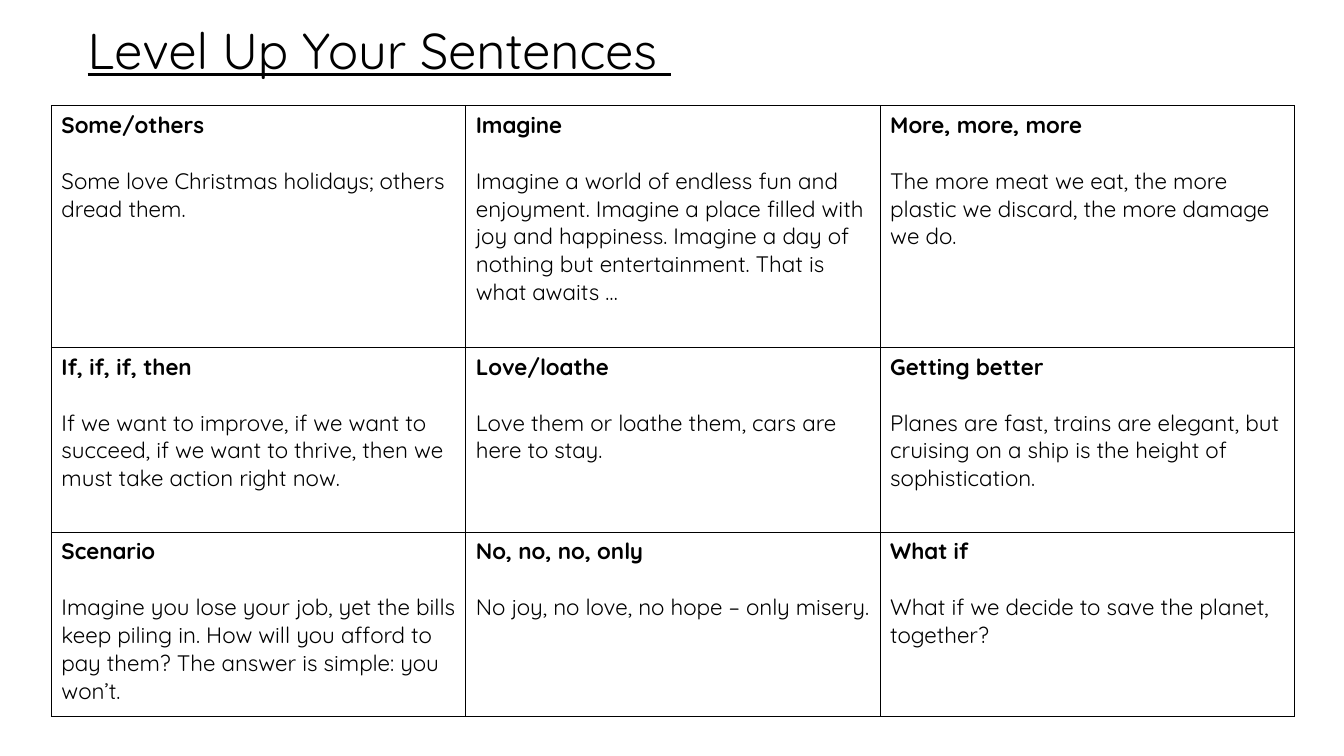
from lxml.etree import SubElement
from pptx import Presentation
from pptx.dml.color import RGBColor
from pptx.enum.text import MSO_ANCHOR, PP_ALIGN
from pptx.oxml.ns import qn
from pptx.util import Pt

EMU_PER_PX = 9144  # 100 px to the inch
FONT = "Quicksand"
BLACK = "000000"
WHITE = "FFFFFF"
COLUMN_WIDTHS = [411, 411, 411]
ROW_HEIGHTS = [240, 183, 183]

# Each cell: name of the sentence type, example
SENTENCE_TYPES = [
    [
        ("Some/others", "Some love Christmas holidays; others dread them."),
        ("Imagine", "Imagine a world of endless fun and enjoyment. Imagine a place "
                    "filled with joy and happiness. Imagine a day of nothing but "
                    "entertainment. That is what awaits …"),
        ("More, more, more", "The more meat we eat, the more plastic we discard, "
                             "the more damage we do."),
    ],
    [
        ("If, if, if, then", "If we want to improve, if we want to succeed, if we want "
                             "to thrive, then we must take action right now."),
        ("Love/loathe", "Love them or loathe them, cars are here to stay."),
        ("Getting better", "Planes are fast, trains are elegant, but cruising on a ship "
                           "is the height of sophistication."),
    ],
    [
        ("Scenario", "Imagine you lose your job, yet the bills keep piling in. How will "
                     "you afford to pay them? The answer is simple: you won’t."),
        ("No, no, no, only", "No joy, no love, no hope – only misery."),
        ("What if", "What if we decide to save the planet, together?"),
    ],
]


def px(length):
    return length * EMU_PER_PX


def add_run(paragraph, text, size, bold=False, underline=False, color=BLACK):
    run = paragraph.add_run()
    run.text = text
    run.font.name = FONT
    run.font.size = Pt(size)
    run.font.bold = bold
    run.font.underline = underline
    run.font.color.rgb = RGBColor.from_string(color)


presentation = Presentation()
presentation.slide_width = px(1333)
presentation.slide_height = px(750)
slide = presentation.slides.add_slide(presentation.slide_layouts[5])

# Title
title = slide.shapes.title
title.left, title.top, title.width, title.height = px(77), px(0), px(1150), px(105)
title.text_frame.vertical_anchor = MSO_ANCHOR.MIDDLE
title_paragraph = title.text_frame.paragraphs[0]
title_paragraph.alignment = PP_ALIGN.LEFT
title_paragraph.line_spacing = 0.9
add_run(title_paragraph, "Level Up Your Sentences ", 36, underline=True)

# Table grid
table = slide.shapes.add_table(
    len(ROW_HEIGHTS), len(COLUMN_WIDTHS), px(51), px(105),
    px(sum(COLUMN_WIDTHS)), px(sum(ROW_HEIGHTS))).table
table.first_row = False
table.horz_banding = False
for column, width in zip(table.columns, COLUMN_WIDTHS):
    column.width = px(width)
for row, height in zip(table.rows, ROW_HEIGHTS):
    row.height = px(height)

# Cells: borders, fill, then heading and example
for row_index, row_entries in enumerate(SENTENCE_TYPES):
    for column_index, (heading, example) in enumerate(row_entries):
        cell = table.cell(row_index, column_index)
        properties = cell._tc.get_or_add_tcPr()
        for side in ("a:lnL", "a:lnR", "a:lnT", "a:lnB"):
            border = SubElement(properties, qn(side), w=str(Pt(1)))
            border_fill = SubElement(border, qn("a:solidFill"))
            SubElement(border_fill, qn("a:srgbClr"), val=BLACK)
        cell.fill.solid()
        cell.fill.fore_color.rgb = RGBColor.from_string(WHITE)

        heading_paragraph = cell.text_frame.paragraphs[0]
        heading_paragraph.space_after = Pt(20)
        add_run(heading_paragraph, heading, 16, bold=True)
        add_run(cell.text_frame.add_paragraph(), example, 16)

presentation.save("out.pptx")
